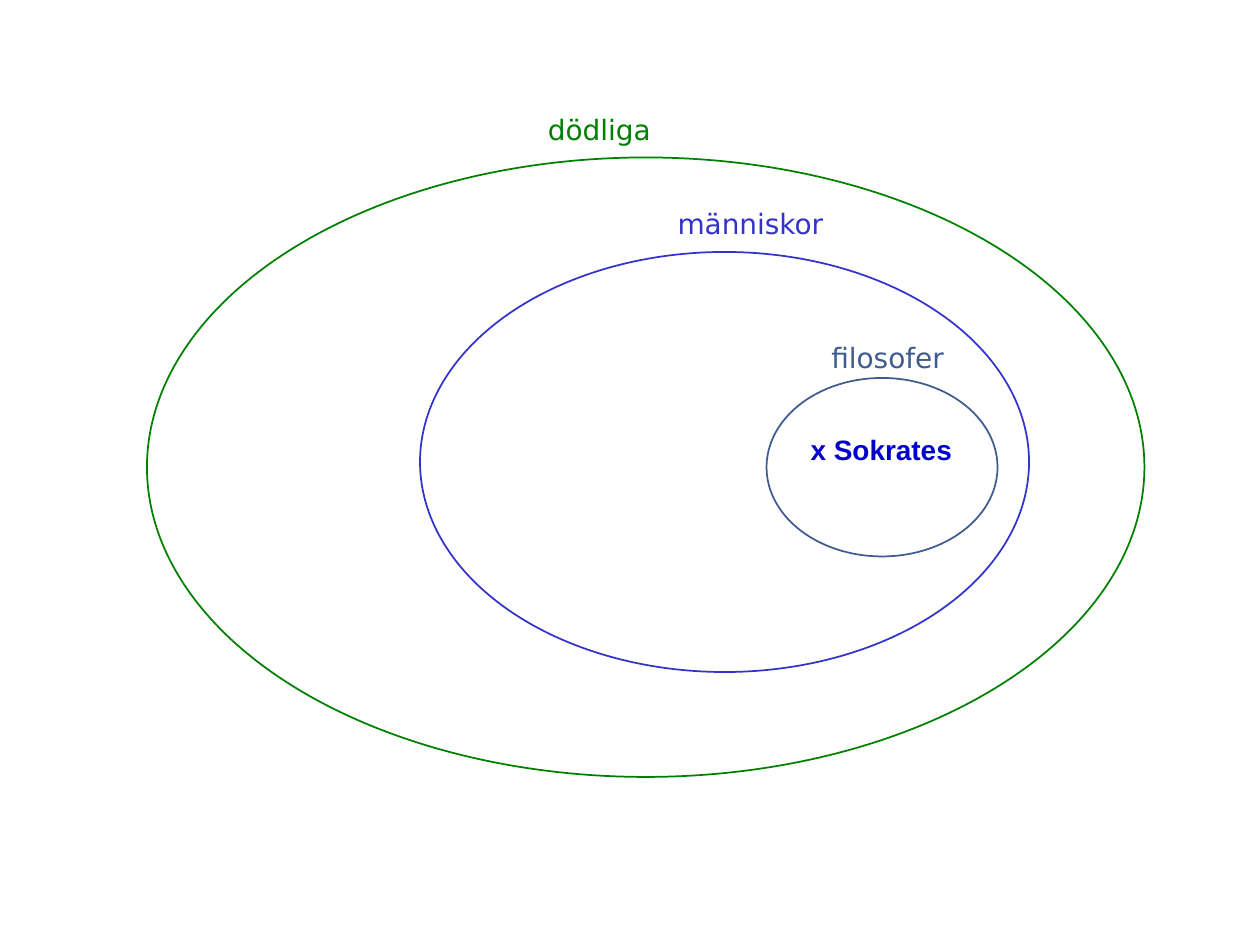
from pptx import Presentation
from pptx.dml.color import RGBColor
from pptx.enum.shapes import MSO_SHAPE
from pptx.enum.text import MSO_AUTO_SIZE, PP_ALIGN
from pptx.util import Inches, Pt

COLORS = {
    "paper": "FFFFFF",
    "mortals": "008000",
    "humans": "3333CC",
    "philosophers": "405C8E",
    "socrates": "0000CC",
}
CELLS_PER_INCH = 12


def color(name):
    return RGBColor.from_string(COLORS[name])


def grid(*cells):
    """Turn grid columns and rows into lengths."""
    return [Inches(c / CELLS_PER_INCH) for c in cells]


class Diagram:
    """Style and current slide of a set diagram."""

    size = Pt(16)
    line_width = Pt(1)

    def __init__(self, prs):
        self.s = prs.slides.add_slide(prs.slide_layouts[6])

    def ellipse(self, name, box):
        sp = self.s.shapes.add_shape(MSO_SHAPE.OVAL, *grid(*box))
        sp.shadow.inherit = False
        sp.fill.solid()
        sp.fill.fore_color.rgb = color("paper")
        sp.line.color.rgb = color(name)
        sp.line.width = self.line_width

    def label(self, text, name, box, font="DejaVu Sans", bold=False,
              align=PP_ALIGN.LEFT, wrap=True):
        tf = self.s.shapes.add_textbox(*grid(*box)).text_frame
        tf.word_wrap = wrap
        tf.auto_size = MSO_AUTO_SIZE.SHAPE_TO_FIT_TEXT
        p = tf.paragraphs[0]
        p.alignment = align
        r = p.add_run()
        r.text = text
        for key, value in {"name": font, "size": self.size, "bold": bold}.items():
            setattr(r.font, key, value)
        r.font.color.rgb = color(name)


def main():
    prs = Presentation()
    prs.slide_width, prs.slide_height = grid(120, 90)
    diagram = Diagram(prs)

    # Name, ellipse box, label text, label box
    sets = [
        ("mortals", (14, 15, 95, 59), "dödliga", (51, 10.1, 15, 4.3)),
        ("humans", (40, 24, 58, 40), "människor", (63.35, 19.1, 17.65, 4.3)),
        ("philosophers", (73, 36, 22, 17), "filosofer", (78, 31.8, 15, 4.3)),
    ]
    for name, box, _, _ in sets:
        diagram.ellipse(name, box)
    for name, _, text, box in sets:
        diagram.label(text, name, box)
    diagram.label("x Sokrates", "socrates", (76, 40.6, 15.85, 4.4),
                  font="Arial", bold=True, align=PP_ALIGN.CENTER, wrap=False)

    prs.save("out.pptx")


if __name__ == "__main__":
    main()
